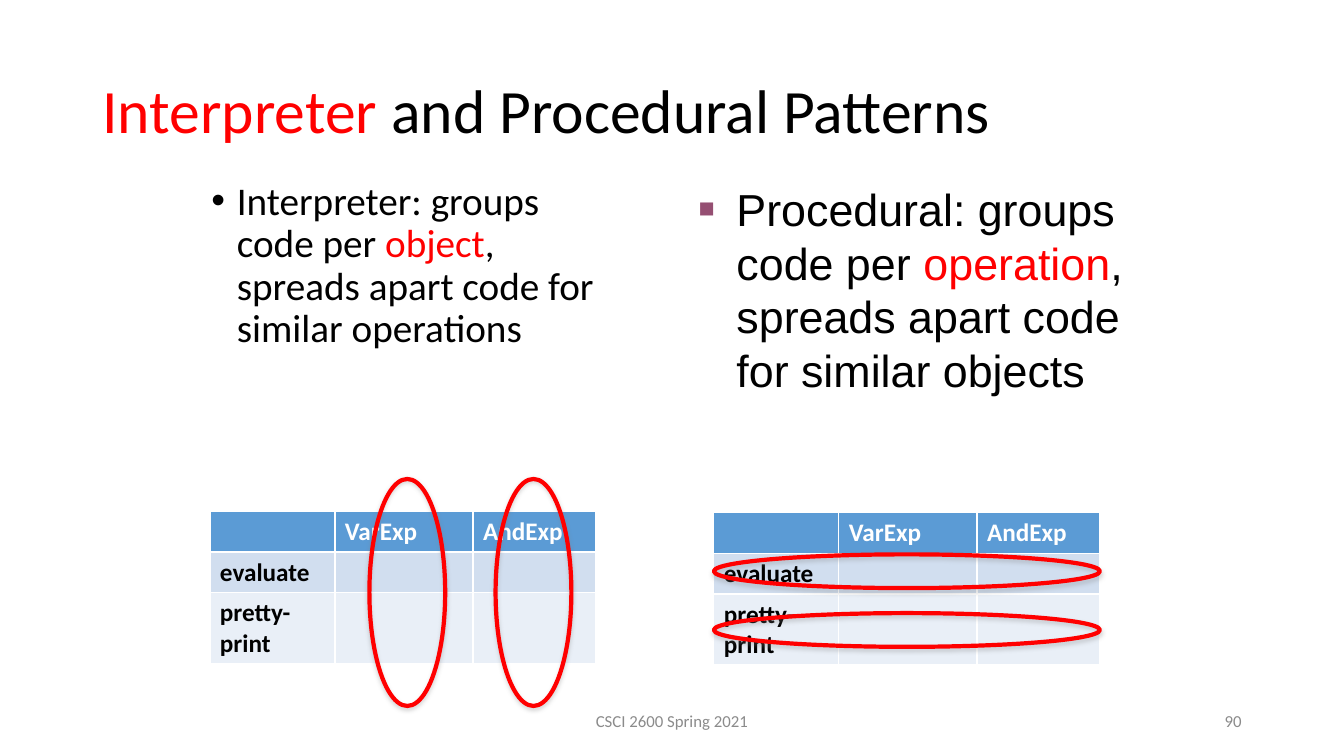
import pptx
import pptx.util
import pptx.dml.color
import pptx.enum.shapes
import pptx.enum.text
import pptx.oxml
import pptx.oxml.ns
from pptx.util import Cm

COLORS = {
    "black": "000000", "red": "FF0000", "white": "FFFFFF", "gray": "8B8B8B",
    "plum": "954F72", "shadow": "808080",
    "header": "5B9BD5", "band_dark": "D1DEEF", "band_light": "E9EFF7",
}

# Content: runs are (text, color) pairs, boxes are (left, top, width, height) in cm
TITLE = [("Interpreter", "red"), (" and Procedural Patterns", "black")]
INTERPRETER = [("Interpreter: groups code per ", "black"), ("object", "red"),
               (", spreads apart code for similar operations", "black")]
PROCEDURAL = [("Procedural: groups code per ", "black"), ("operation", "red"),
              (", spreads apart code for similar objects", "black")]
FOOTER = [("CSCI 2600 Spring 2021", "gray")]
PAGE_NUMBER = [("90", "gray")]

TABLE_ROWS = [("", "VarExp", "AndExp"), ("evaluate", "", ""), ("pretty- print", "", "")]
ROW_FILLS = ["header", "band_dark", "band_light"]
COLUMN_WIDTHS = [3.15, 3.48, 3.1]
ROW_HEIGHTS = [1.03, 1.03, 1.78]
TABLE_POSITIONS = [(5.29, 12.88), (17.99, 12.91)]

COLUMN_RINGS = [(left, 12.07, 1.91, 5.72) for left in (9.31, 12.49)]
ROW_RINGS = [(17.99, top, sum(COLUMN_WIDTHS), 0.85) for top in (13.97, 15.45)]

MIDDLE = pptx.enum.text.MSO_ANCHOR.MIDDLE
TOP = pptx.enum.text.MSO_ANCHOR.TOP
ALIGN = pptx.enum.text.PP_ALIGN


def rgb(name):
    return pptx.dml.color.RGBColor.from_string(COLORS[name])


def xml(tag, attributes="", content=""):
    namespace = pptx.oxml.ns.nsdecls("a")
    return pptx.oxml.parse_xml(f"<a:{tag} {namespace} {attributes}>{content}</a:{tag}>")


def color_xml(name, content=""):
    return f'<a:srgbClr val="{COLORS[name]}">{content}</a:srgbClr>'


def format_run(run, size, color, font="Calibri", bold=False):
    run.font.name = font
    run.font.size = pptx.util.Pt(size)
    run.font.bold = bold
    run.font.color.rgb = rgb(color)


def add_text(slide, box, runs, size, font="Calibri", anchor=TOP,
             align=ALIGN.LEFT, line_spacing=1.0):
    frame = slide.shapes.add_textbox(*map(Cm, box)).text_frame
    frame.word_wrap = True
    frame.vertical_anchor = anchor
    paragraph = frame.paragraphs[0]
    paragraph.alignment = align
    paragraph.line_spacing = line_spacing
    for text, color in runs:
        run = paragraph.add_run()
        run.text = text
        format_run(run, size, color, font)
    return paragraph


def add_bullet(paragraph, character, color, percent, indent, space_before):
    paragraph.space_before = pptx.util.Pt(space_before)
    properties = paragraph._p.get_or_add_pPr()
    properties.set("marL", str(Cm(indent)))
    properties.set("indent", str(-Cm(indent)))
    properties.append(xml("buClr", content=color_xml(color)))
    properties.append(xml("buSzPct", f'val="{percent * 1000}"'))
    properties.append(xml("buFont", 'typeface="Arial"'))
    properties.append(xml("buChar", f'char="{character}"'))


def add_grid(slide, left, top):
    table = slide.shapes.add_table(
        len(TABLE_ROWS), len(COLUMN_WIDTHS), Cm(left), Cm(top),
        Cm(sum(COLUMN_WIDTHS)), Cm(sum(ROW_HEIGHTS))).table
    for column, width in zip(table.columns, COLUMN_WIDTHS):
        column.width = Cm(width)
    for row, height, texts, fill in zip(table.rows, ROW_HEIGHTS, TABLE_ROWS, ROW_FILLS):
        row.height = Cm(height)
        for cell, text in zip(row.cells, texts):
            cell.fill.solid()
            cell.fill.fore_color.rgb = rgb(fill)
            cell.text_frame.text = text
            for run in cell.text_frame.paragraphs[0].runs:
                format_run(run, 18, "white" if fill == "header" else "black", bold=True)


def add_ring(slide, box):
    ring = slide.shapes.add_shape(pptx.enum.shapes.MSO_SHAPE.OVAL, *map(Cm, box))
    ring.fill.background()
    ring.line.color.rgb = rgb("red")
    ring.line.width = pptx.util.Pt(3)
    # Soft shadow just below the outline
    ring.shadow.inherit = False
    effects = ring._element.spPr.find(pptx.oxml.ns.qn("a:effectLst"))
    effects.append(xml(
        "outerShdw", 'blurRad="40000" dist="23000" dir="5400000" rotWithShape="0"',
        color_xml("shadow", '<a:alpha val="35000"/>')))


def main():
    presentation = pptx.Presentation()
    presentation.slide_width = Cm(33.87)
    presentation.slide_height = Cm(19.05)
    slide = presentation.slides.add_slide(presentation.slide_layouts[6])

    # Title and the two statements
    add_text(slide, (2.33, 1.02, 29.21, 3.68), TITLE, 44, anchor=MIDDLE, line_spacing=0.9)
    interpreter = add_text(slide, (5.08, 4.45, 10.8, 12.6), INTERPRETER, 28, line_spacing=0.9)
    add_bullet(interpreter, "•", "black", 100, 0.64, 10)
    procedural = add_text(slide, (17.36, 4.45, 11.43, 12.6), PROCEDURAL, 32, font="Arial")
    add_bullet(procedural, "■", "plum", 60, 0.95, 6.4)

    # Tables, then the rings over their columns and rows
    for left, top in TABLE_POSITIONS:
        add_grid(slide, left, top)
    for box in COLUMN_RINGS + ROW_RINGS:
        add_ring(slide, box)

    # Footer
    add_text(slide, (11.22, 17.65, 11.43, 1.02), FOOTER, 12, anchor=MIDDLE, align=ALIGN.CENTER)
    add_text(slide, (23.92, 17.65, 7.62, 1.02), PAGE_NUMBER, 12, anchor=MIDDLE, align=ALIGN.RIGHT)

    presentation.save("out.pptx")


if __name__ == "__main__":
    main()
